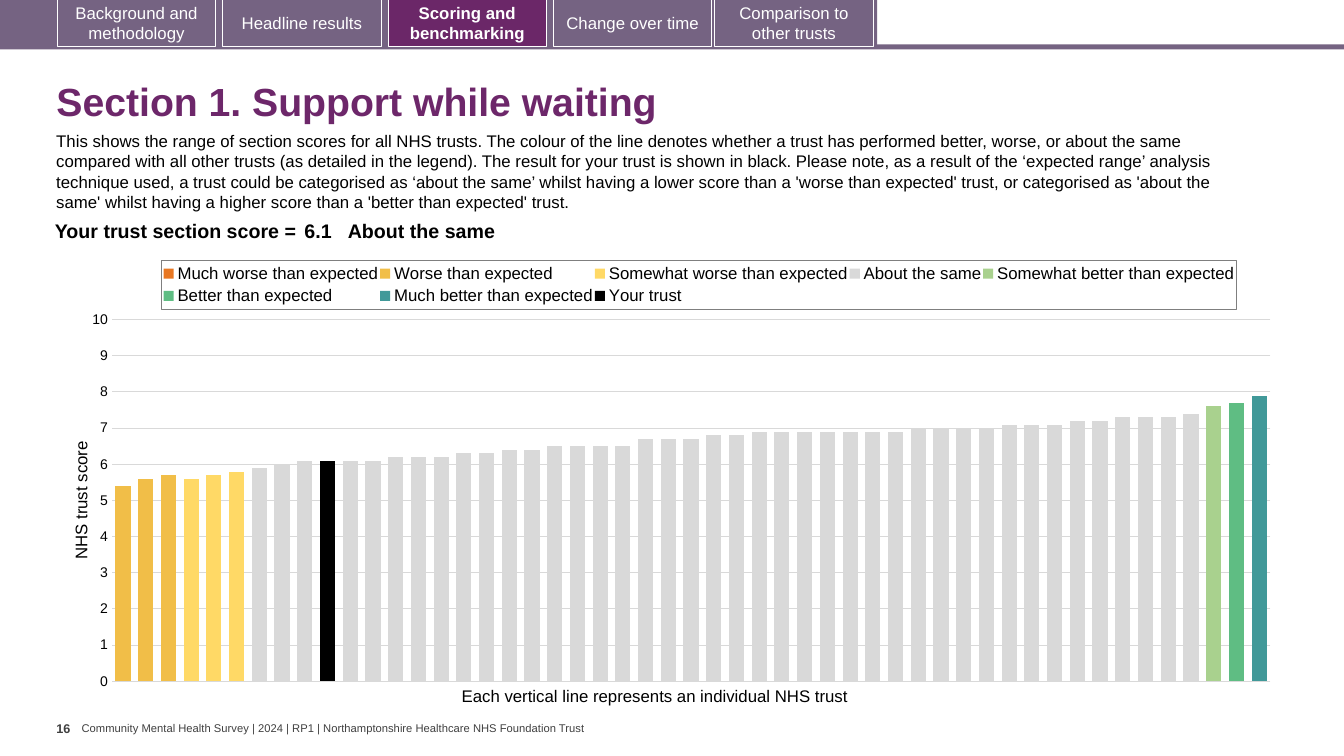
from copy import deepcopy
from dataclasses import dataclass
from lxml import etree
from pptx import Presentation
from pptx.chart.data import CategoryChartData as Data
from pptx.dml.color import RGBColor as RGB
from pptx.enum.chart import XL_CHART_TYPE as Kind, XL_LEGEND_POSITION as Side, XL_TICK_MARK as Tick
from pptx.enum.shapes import MSO_SHAPE as Shape
from pptx.enum.text import MSO_ANCHOR as Anchor, MSO_AUTO_SIZE as Fit, PP_ALIGN as Align
from pptx.oxml.ns import qn
from pptx.util import Inches, Pt

# Content
TABS = [("Background and methodology", 0.57), ("Headline results", 2.21),
        ("Scoring and benchmarking", 3.85), ("Change over time", 5.49),
        ("Comparison to other trusts", 7.09)]
ACTIVE = 2
TITLE = "Section 1. Support while waiting"
INTRO = ("This shows the range of section scores for all NHS trusts. The colour of the line denotes whether "
         "a trust has performed better, worse, or about the same compared with all other trusts (as detailed "
         "in the legend). The result for your trust is shown in black. Please note, as a result of the "
         "‘expected range’ analysis technique used, a trust could be categorised as ‘about the same’ whilst "
         "having a lower score than a 'worse than expected' trust, or categorised as 'about the same' whilst "
         "having a higher score than a 'better than expected' trust.")
SCORE = [("Your trust section score =", 2.63), ("6.1", 0.47), ("About the same", 8.59)]
SAME = [5.9, 6, 6.1, 6.1, 6.1, 6.1, 6.2, 6.2, 6.2, 6.3, 6.3, 6.4, 6.4, 6.5, 6.5, 6.5, 6.5, 6.7, 6.7, 6.7, 6.8,
        6.8, 6.9, 6.9, 6.9, 6.9, 6.9, 6.9, 6.9, 7, 7, 7, 7, 7.1, 7.1, 7.1, 7.2, 7.2, 7.3, 7.3, 7.3, 7.4]
# Name, colour, first trust, scores
BANDS = [("Much worse than expected", "E87722", 0, []),
         ("Worse than expected", "F1BE48", 0, [5.4, 5.6, 5.7]),
         ("Somewhat worse than expected", "FFD966", 3, [5.6, 5.7, 5.8]),
         ("About the same", "D9D9D9", 6, SAME),
         ("Somewhat better than expected", "A9D18E", 48, [7.6]),
         ("Better than expected", "5FBD83", 49, [7.7]),
         ("Much better than expected", "419999", 50, [7.9]),
         ("Your trust", "000000", 9, [6.1])]
COUNT = 51
Y_TITLE = "NHS trust score"
X_TITLE = "Each vertical line represents an individual NHS trust"
PAGE = "16"
FOOTER = "Community Mental Health Survey | 2024 | RP1 | Northamptonshire Healthcare NHS Foundation Trust"


@dataclass
class Theme:
    face: str = "Arial"
    ink: str = "000000"
    soft: str = "404040"
    white: str = "FFFFFF"
    bar: str = "756382"
    plum: str = "6B2768"
    head: str = "6D276A"
    grid: str = "D9D9D9"
    frame: str = "7F7F7F"
    title: float = 28
    score: float = 14
    body: float = 12
    tick: float = 10
    page: float = 9
    foot: float = 8


T = Theme()


def style(font, size, color=T.ink, bold=False):
    font.name, font.size, font.bold = T.face, Pt(size), bold
    font.color.rgb = RGB.from_string(color)


def write(frame, text, size, color=T.ink, bold=False, align=Align.LEFT):
    frame.text = text
    para = frame.paragraphs[0]
    para.alignment = align
    style(para.font, size, color, bold)


def label(box, text, size, color=T.ink, bold=False, wrap=False, pad=(0.1, 0.05)):
    frame = slide.shapes.add_textbox(*map(Inches, box)).text_frame
    frame.word_wrap = wrap
    frame.margin_left = frame.margin_right = Inches(pad[0])
    frame.margin_top = frame.margin_bottom = Inches(pad[1])
    write(frame, text, size, color, bold)
    return frame


def paint(fill, color):
    fill.solid()
    fill.fore_color.rgb = RGB.from_string(color)


def block(box, color):
    shape = slide.shapes.add_shape(Shape.RECTANGLE, *map(Inches, box))
    shape.shadow.inherit = False
    paint(shape.fill, color)
    shape.line.fill.background()
    return shape


def place(node, spot, share, inner=False):
    for old in node.findall(qn("c:layout")):
        node.remove(old)
    home = etree.Element(qn("c:layout"))
    node.insert(spot, home)
    manual = etree.SubElement(home, qn("c:manualLayout"))
    rules = [("layoutTarget", "inner")] if inner else []
    for tag, val in rules + [("xMode", "edge"), ("yMode", "edge"), *zip("xywh", share)]:
        etree.SubElement(manual, qn("c:" + tag)).set("val", str(val))


deck = Presentation()
deck.slide_width, deck.slide_height = Inches(13.33), Inches(7.5)
slide = deck.slides.add_slide(deck.slide_layouts[5])

# Navigation tabs
block((0, 0.44, 13.33, 0.05), T.bar)
block((0, 0, 8.7, 0.47), T.bar)
for i, (name, left) in enumerate(TABS):
    tab = block((left, -0.01, 1.57, 0.47), T.plum if i == ACTIVE else T.bar)
    paint(tab.line.fill, T.white)
    tab.line.width = Pt(0.75)
    tab.text_frame.word_wrap = True
    tab.text_frame.vertical_anchor = Anchor.MIDDLE
    write(tab.text_frame, name, T.body, T.white, i == ACTIVE, Align.CENTER)

# Title and introduction
head = slide.shapes.title
head.left, head.top, head.width, head.height = map(Inches, (0.46, 0.67, 12.49, 0.72))
head.text_frame.auto_size = Fit.NONE
head.text_frame.vertical_anchor = Anchor.MIDDLE
write(head.text_frame, TITLE, T.title, T.head, True)
head.text_frame.paragraphs[0].line_spacing = 0.9
label((0.46, 1.25, 12.13, 0.91), INTRO, T.body, wrap=True)

# Chart
data = Data()
data.categories = [str(n + 1) for n in range(COUNT)]
for name, _, start, vals in BANDS:
    data.add_series(name, [None] * start + vals + [None] * (COUNT - start - len(vals)))
size = map(Inches, (0.67, 2.47, 12.15, 4.44))
chart = slide.shapes.add_chart(Kind.COLUMN_CLUSTERED, *size, data).chart
chart.has_title = False
style(chart.font, T.tick)
plot = chart.plots[0]
plot.gap_width, plot.overlap, plot.vary_by_categories = 50, 100, False
for series, (_, color, _, _) in zip(plot.series, BANDS):
    series.invert_if_negative = False
    paint(series.format.fill, color)

# Axes
chart.category_axis.visible = False
axis = chart.value_axis
axis.minimum_scale, axis.maximum_scale, axis.major_unit = 0, 10, 1
axis.major_tick_mark = axis.minor_tick_mark = Tick.NONE
axis.format.line.fill.background()
axis.tick_labels.number_format = "0"
axis.tick_labels.number_format_is_linked = False
style(axis.tick_labels.font, T.tick)
rule = axis.major_gridlines.format.line
rule.color.rgb, rule.width = RGB.from_string(T.grid), Pt(0.75)
write(axis.axis_title.text_frame, Y_TITLE, T.body, align=Align.CENTER)

# Your trust on a right-hand axis
area = chart._chartSpace.find(".//" + qn("c:plotArea"))
bars, base, scale = (area.find(qn("c:" + tag)) for tag in ("barChart", "catAx", "valAx"))
pair, floor, right = map(deepcopy, (bars, base, scale))
bars.remove(bars.findall(qn("c:ser"))[-1])
for band in pair.findall(qn("c:ser"))[:-1]:
    pair.remove(band)
for ref, val in zip(pair.findall(qn("c:axId")), ("501", "502")):
    ref.set("val", val)
for part, own, other in ((floor, "501", "502"), (right, "502", "501")):
    part.find(qn("c:axId")).set("val", own)
    part.find(qn("c:crossAx")).set("val", other)
for tag in ("majorGridlines", "title"):
    right.remove(right.find(qn("c:" + tag)))
for tag, val in (("axPos", "r"), ("majorTickMark", "out"), ("tickLblPos", "none"), ("crosses", "max")):
    right.find(qn("c:" + tag)).set("val", val)
bars.addnext(pair)
scale.addnext(right)
right.addnext(floor)
place(area, 0, (0.036, 0.158, 0.946, 0.808), True)

# Legend
chart.has_legend = True
key = chart.legend
key.position, key.include_in_layout = Side.TOP, False
style(key.font, T.body)
place(key._element, 1, (0.077, 0.025, 0.877, 0.11))
edge = etree.Element(qn("c:spPr"))
fill = etree.SubElement(etree.SubElement(edge, qn("a:ln"), w=str(Pt(0.75))), qn("a:solidFill"))
etree.SubElement(fill, qn("a:srgbClr"), val=T.frame)
key._element.find(qn("c:txPr")).addprevious(edge)

# Section score
table = slide.shapes.add_table(1, len(SCORE), *map(Inches, (0.35, 2.15, 11.69, 0.31))).table
table.first_row = table.horz_banding = False
for i, (text, width) in enumerate(SCORE):
    table.columns[i].width = Inches(width)
    cell = table.cell(0, i)
    cell.fill.background()
    cell.margin_left = cell.margin_right = Inches(0 if i == 2 else 0.04)
    cell.margin_top = cell.margin_bottom = Inches(0.04)
    write(cell.text_frame, text, T.score, bold=True, align=Align.LEFT if i else Align.RIGHT)

# Axis caption and footer
label((4.48, 6.75, 4.11, 0.3), X_TITLE, T.body)
label((0.56, 7.1, 0.25, 0.4), PAGE, T.page, T.soft, True, pad=(0, 0.05))
foot = label((0.81, 7.16, 5.05, 0.13), FOOTER, T.foot, T.soft, pad=(0, 0))
foot.vertical_anchor = Anchor.MIDDLE
deck.save("out.pptx")
